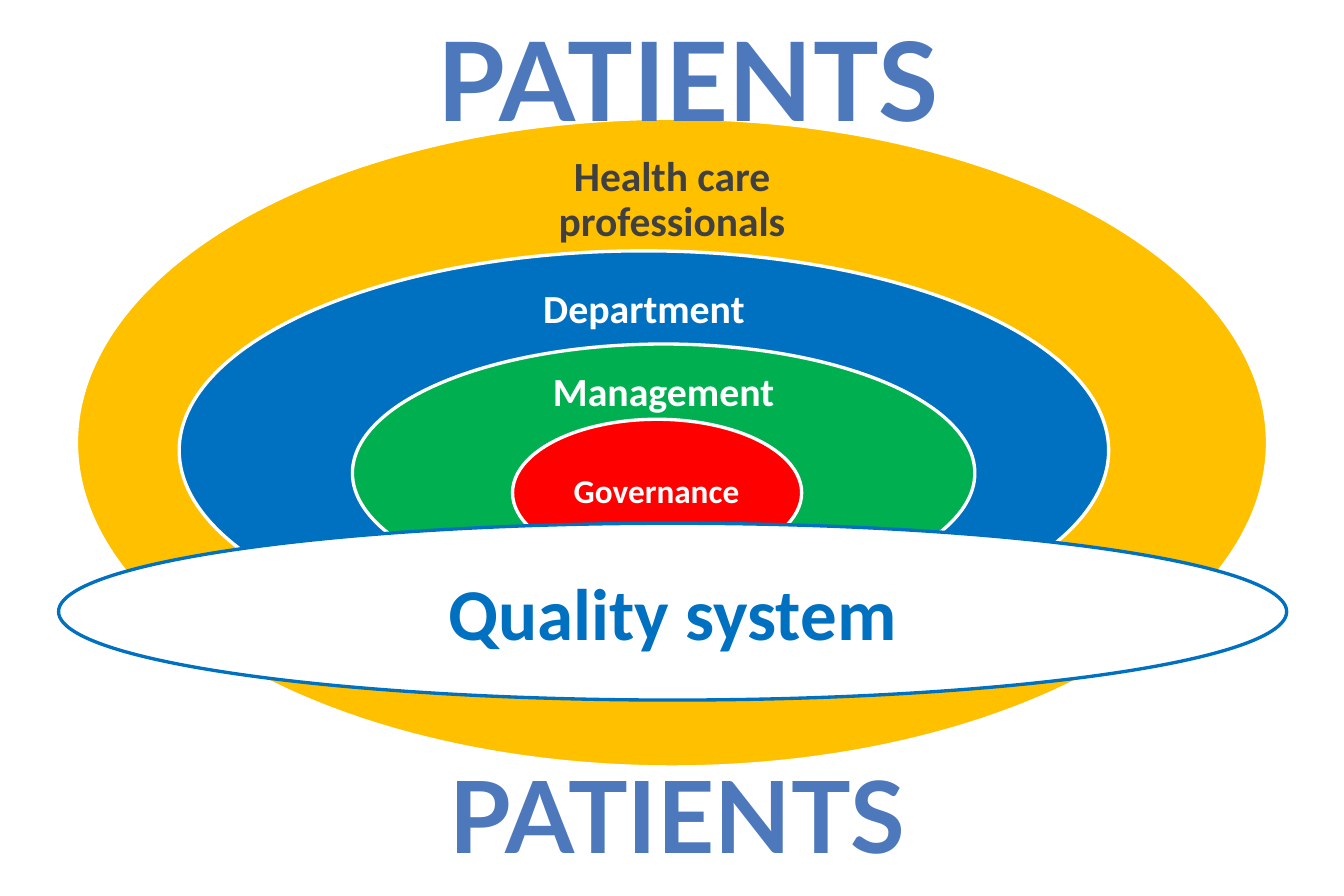
from dataclasses import dataclass

from pptx import Presentation
from pptx import util as u
from pptx.dml.color import RGBColor
from pptx.enum import shapes, text

COLUMNS, ROWS = 45, 30
WHITE, BLUE, PATIENT_BLUE = "FFFFFF", "0070C0", "4D79BC"


@dataclass(frozen=True)
class Area:
    column: float
    row: float
    columns: float
    rows: float


@dataclass(frozen=True)
class Label:
    words: str
    size: int
    color: str
    font: str = "Calibri"
    inset: float = 0.4
    spacing: float = 1.0
    anchor: text.MSO_ANCHOR = text.MSO_ANCHOR.MIDDLE


@dataclass(frozen=True)
class Layer:
    oval: Area
    fill: str
    label_area: Area
    label: Label


def layer_label(words: str, size: int, color: str = WHITE, inset: float = 0.76) -> Label:
    return Label(words, size, color, inset=inset, spacing=0.9)


def patients_label(size: int) -> Label:
    return Label("PATIENTS", size, PATIENT_BLUE, "Lato", anchor=text.MSO_ANCHOR.TOP)


LAYERS = [
    Layer(Area(2.56, 3.96, 39.88, 21.72), "FFC000",
          Area(16.92, 5.08, 11.16, 3.28), layer_label("Health care professionals", 25, "404040")),
    Layer(Area(6, 8.4, 31.12, 13.36), BLUE,
          Area(16.12, 9.2, 10.88, 2.4), layer_label("Department", 24)),
    Layer(Area(11.8, 11.52, 20.84, 8.64), "00B050",
          Area(17.36, 12.2, 9.72, 1.96), layer_label("Management", 24)),
    Layer(Area(17.16, 14.04, 9.68, 4.92), "FF0000",
          Area(18.56, 15.28, 6.84, 2.44), layer_label("Governance", 20, inset=0.64)),
]

deck = Presentation()
deck.slide_width, deck.slide_height = u.Inches(11.25), u.Inches(7.5)
CELL_WIDTH, CELL_HEIGHT = deck.slide_width / COLUMNS, deck.slide_height / ROWS


def rgb(color: str) -> RGBColor:
    return RGBColor.from_string(color)


def box(area: Area) -> tuple[int, int, int, int]:
    return (round(area.column * CELL_WIDTH), round(area.row * CELL_HEIGHT),
            round(area.columns * CELL_WIDTH), round(area.rows * CELL_HEIGHT))


def write(shape, label: Label) -> None:
    frame = shape.text_frame
    frame.text = label.words
    frame.word_wrap = True
    frame.auto_size = text.MSO_AUTO_SIZE.NONE
    frame.vertical_anchor = label.anchor
    frame.margin_left = frame.margin_right = round(label.inset * CELL_WIDTH)
    vertical_inset = label.inset if label.spacing < 1 else label.inset / 2
    frame.margin_top = frame.margin_bottom = round(vertical_inset * CELL_HEIGHT)
    paragraph = frame.paragraphs[0]
    paragraph.alignment = text.PP_ALIGN.CENTER
    paragraph.line_spacing = label.spacing
    font = paragraph.runs[0].font
    font.name, font.size, font.bold = label.font, u.Pt(label.size), True
    font.color.rgb = rgb(label.color)


def add_oval(slide, area: Area, fill: str, line: str):
    oval = slide.shapes.add_shape(shapes.MSO_SHAPE.OVAL, *box(area))
    oval.shadow.inherit = False
    oval.fill.solid()
    oval.fill.fore_color.rgb = rgb(fill)
    oval.line.color.rgb = rgb(line)
    oval.line.width = u.Pt(2)
    return oval


def add_label(slide, area: Area, label: Label) -> None:
    write(slide.shapes.add_textbox(*box(area)), label)


def main() -> None:
    slide = deck.slides.add_slide(deck.slide_layouts[5])
    for layer in LAYERS:
        add_oval(slide, layer.oval, layer.fill, WHITE)
        add_label(slide, layer.label_area, layer.label)

    quality_system = add_oval(slide, Area(1.96, 17.52, 41.12, 5.92), WHITE, BLUE)
    write(quality_system, Label("Quality system", 44, BLUE))

    patients_above = slide.shapes.title
    (patients_above.left, patients_above.top,
     patients_above.width, patients_above.height) = box(Area(11.88, 0.2, 22.32, 4.84))
    write(patients_above, patients_label(66))
    patients_above.element.getparent().append(patients_above.element)

    add_label(slide, Area(11.52, 25.04, 22.32, 4.44), patients_label(60))
    deck.save("out.pptx")


if __name__ == "__main__":
    main()
